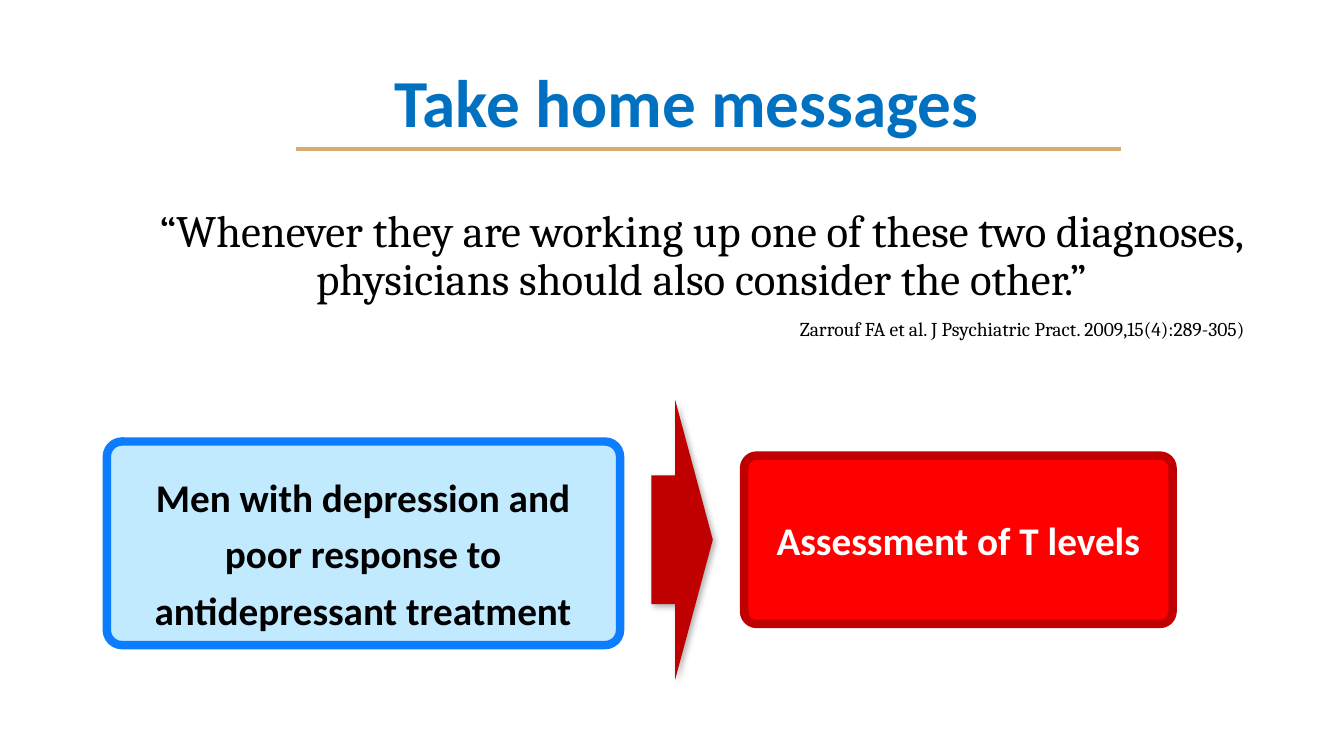
import dataclasses

import lxml.etree
import pptx
import pptx.dml.color
import pptx.enum.shapes
import pptx.enum.text
import pptx.oxml
import pptx.oxml.ns
import pptx.util

Inches = pptx.util.Inches
Pt = pptx.util.Pt
Shapes = pptx.enum.shapes.MSO_SHAPE
Anchor = pptx.enum.text.MSO_ANCHOR
rgb = pptx.dml.color.RGBColor.from_string
qn = pptx.oxml.ns.qn


@dataclasses.dataclass(frozen=True)
class Theme:
    heading_font: str = "Calibri"
    quote_font: str = "Cambria"
    title_size: int = 48
    quote_size: int = 32
    label_size: int = 28
    citation_size: int = 14
    title: str = "0070C0"
    rule: str = "D6AC6F"
    ink: str = "000000"
    white: str = "FFFFFF"
    patient_fill: str = "C1EAFF"
    patient_edge: str = "0C7DFF"
    test_fill: str = "FF0000"
    dark_red: str = "C00000"


theme = Theme()
deck = pptx.Presentation()
deck.slide_width, deck.slide_height = Inches(13.33), Inches(7.5)
page = deck.slides.add_slide(deck.slide_layouts[6])


def write(box, text, font, size, color, bold=False, spacing=None, anchor=Anchor.TOP):
    """Fill a text box or shape with one centred paragraph."""
    box.text_frame.word_wrap = True
    box.text_frame.vertical_anchor = anchor
    para = box.text_frame.paragraphs[0]
    para.text = text
    para.alignment = pptx.enum.text.PP_ALIGN.CENTER
    para.line_spacing = spacing
    para.font.name, para.font.size, para.font.bold = font, Pt(size), bold
    para.font.color.rgb = rgb(color)


def add_block(kind, place, adjustments, fill, edge=None):
    block = page.shapes.add_shape(kind, *map(Inches, place))
    for index, value in enumerate(adjustments):
        block.adjustments[index] = value
    block.shadow.inherit = False
    block.fill.solid()
    block.fill.fore_color.rgb = rgb(fill)
    if edge:
        block.line.color.rgb = rgb(edge)
        block.line.width = Pt(6)
    else:
        block.line.fill.background()
    return block


# Quotation, citation and title
quote = page.shapes.add_textbox(*map(Inches, (1.27, 2.02, 11.38, 1.11)))
write(quote, "“Whenever they are working up one of these two diagnoses, "
      "physicians should also consider the other.”",
      theme.quote_font, theme.quote_size, theme.ink, spacing=0.9)
citation = page.shapes.add_textbox(*map(Inches, (6.4, 3.09, 7.48, 0.34)))
write(citation, "Zarrouf FA et al. J Psychiatric Pract. 2009,15(4):289-305)",
      theme.quote_font, theme.citation_size, theme.ink)
title = page.shapes.add_textbox(*map(Inches, (0, 0.55, 13.62, 0.91)))
write(title, "Take home messages", theme.heading_font, theme.title_size, theme.title, bold=True)

title_rule = page.shapes.add_connector(
    pptx.enum.shapes.MSO_CONNECTOR.STRAIGHT, *map(Inches, (2.94, 1.48, 11.12, 1.48)))
title_rule.line.color.rgb = rgb(theme.rule)
title_rule.line.width = Pt(3)
lxml.etree.SubElement(title_rule._element.spPr, qn("a:effectLst"))

# Patients lead to the test
test = add_block(Shapes.ROUNDED_RECTANGLE, (7.38, 4.52, 4.25, 1.67), [0.074],
                 theme.test_fill, theme.dark_red)
write(test, "Assessment of T levels", theme.heading_font, theme.label_size, theme.white,
      bold=True, anchor=Anchor.MIDDLE)
add_block(Shapes.ROUNDED_RECTANGLE, (1.06, 4.38, 5.09, 2.02), [0.074],
          theme.patient_fill, theme.patient_edge)
patients = page.shapes.add_textbox(*map(Inches, (1.16, 4.55, 4.88, 1.68)))
write(patients, "Men with depression and poor response to antidepressant treatment",
      theme.heading_font, theme.label_size, theme.ink, bold=True, spacing=1.2)

arrow = add_block(Shapes.RIGHT_ARROW, (6.46, 3.97, 0.61, 2.77), [0.461, 0.611], theme.dark_red)
effects = arrow._element.spPr.find(qn("a:effectLst"))
shadow = lxml.etree.SubElement(
    effects, qn("a:outerShdw"), blurRad=str(Pt(4.5)), dist=str(Pt(2.6)),
    dir=str(53 * 60000), rotWithShape="0")
shade = lxml.etree.SubElement(shadow, qn("a:srgbClr"), val=theme.ink)
lxml.etree.SubElement(shade, qn("a:alpha"), val="30000")

deck.save("out.pptx")
